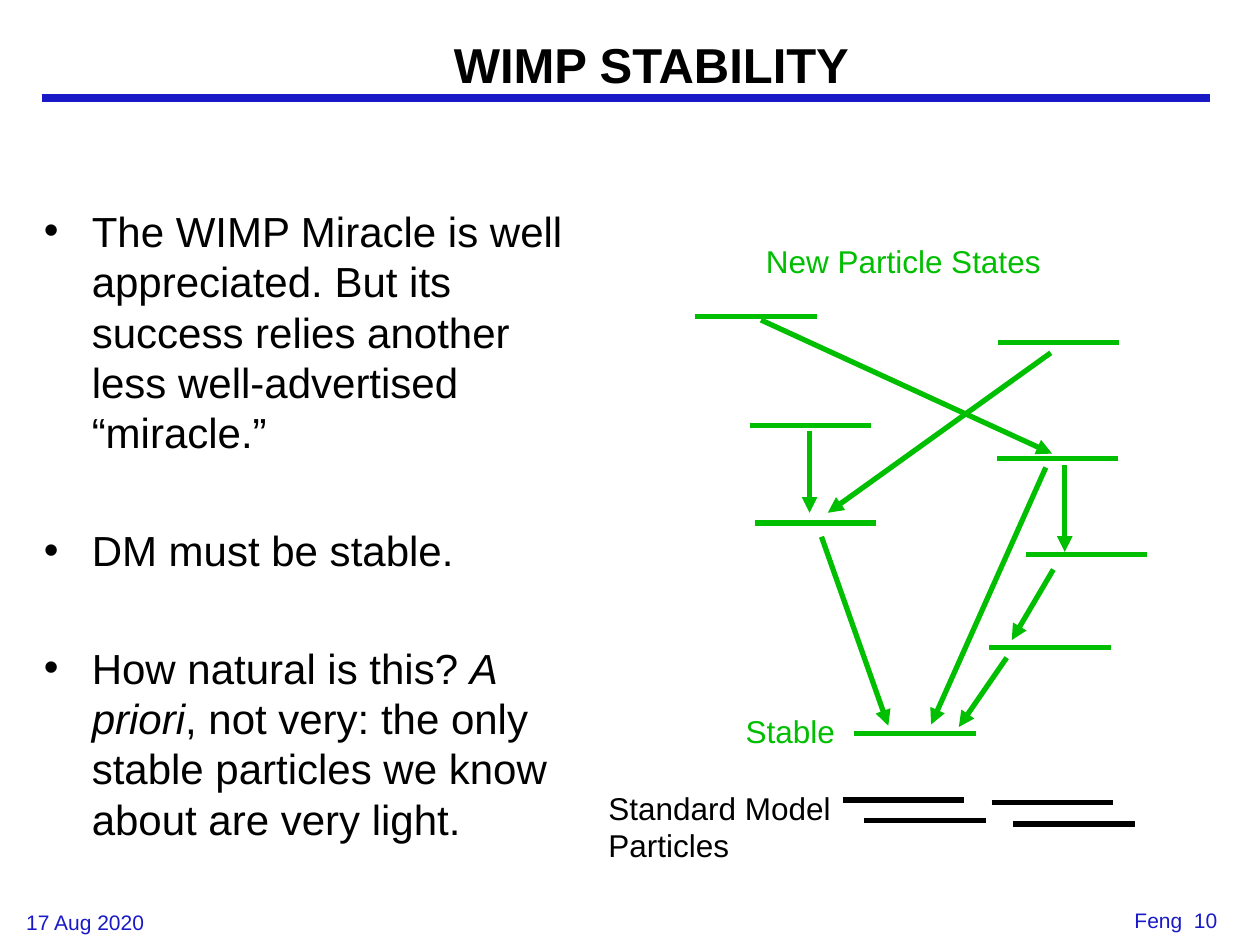
from dataclasses import dataclass
from lxml import etree
from pptx import Presentation
from pptx import util as u
from pptx.dml.color import RGBColor
from pptx.enum import shapes, text
from pptx.oxml.ns import qn


@dataclass(frozen=True)
class Theme:
    font: str = "Arial"
    ink: str = "000000"
    blue: str = "1919C8"
    green: str = "00BE00"
    title: int = 28
    body: int = 24
    label: int = 18
    foot: int = 12
    rule: float = 4.5
    line: float = 3
    gap: float = 38.4


THEME = Theme()
COLS, ROWS = 100, 75
WIDE, HIGH = u.Inches(10), u.Inches(7.5)
LEVEL = 9.65  # columns spanned by one energy level

# Left end of each level: column, row
STATES = [(55.2, 25.1), (79.2, 27.2), (59.5, 33.8), (79.1, 36.4),
          (59.9, 41.5), (81.4, 44), (78.5, 51.4), (67.8, 58.2)]
KNOWN = [(66.9, 63.5), (68.6, 65.1), (78.7, 63.7), (80.4, 65.4)]
# Start column and row, then end column and row
DECAYS = [(60.4, 25.4, 83.5, 36), (83.4, 28, 65.7, 40.7),
          (64.25, 34.2, 64.25, 40.7), (84.5, 36.9, 84.5, 43.8),
          (83, 37.1, 73.9, 57.5), (65.2, 42.6, 70.5, 57.6),
          (83.6, 45.2, 80.3, 50.8), (79.9, 52.2, 76.1, 57.7)]
POINTS = [
    [("The WIMP Miracle is well appreciated. But its success relies another "
      "less well-advertised “miracle.”", False)],
    [("DM must be stable.", False)],
    [("How natural is this? ", False), ("A priori", True),
     (", not very: the only stable particles we know about are very light.",
      False)],
]


def col(n):
    return round(WIDE * n / COLS)


def row(n):
    return round(HIGH * n / ROWS)


def style(run, size, tone, bold=False, slant=False):
    font = run.font
    font.name, font.size = THEME.font, u.Pt(size)
    font.bold, font.italic = bold, slant
    font.color.rgb = RGBColor.from_string(tone)


def frame(slide, x, y, w, h, wrap=True):
    box = slide.shapes.add_textbox(col(x), row(y), col(w), row(h))
    box.text_frame.word_wrap = wrap
    return box.text_frame


def label(slide, words, area, size, tone, align="LEFT", wrap=False, bold=False):
    tf = frame(slide, *area, wrap=wrap)
    tf.text = words
    for para in tf.paragraphs:
        para.alignment = getattr(text.PP_ALIGN, align)
        for run in para.runs:
            style(run, size, tone, bold)
    return tf


def bullets(slide, area, points):
    tf = frame(slide, *area)
    for i, parts in enumerate(points):
        para = tf.add_paragraph() if i else tf.paragraphs[0]
        props = para._p.get_or_add_pPr()
        props.set("marL", str(u.Inches(0.38)))
        props.set("indent", str(-u.Inches(0.38)))
        etree.SubElement(props, qn("a:buFont"), typeface=THEME.font)
        etree.SubElement(props, qn("a:buChar"), char="•")
        if i:
            para.space_before = u.Pt(THEME.gap)
        for words, slant in parts:
            run = para.add_run()
            run.text = words
            style(run, THEME.body, THEME.ink, slant=slant)


def line(slide, x1, y1, x2, y2, tone, width=THEME.line, arrow=False):
    link = slide.shapes.add_connector(
        shapes.MSO_CONNECTOR.STRAIGHT, col(x1), row(y1), col(x2), row(y2))
    link.line.color.rgb = RGBColor.from_string(tone)
    link.line.width = u.Pt(width)
    if arrow:
        etree.SubElement(link.line._get_or_add_ln(), qn("a:tailEnd"),
                         type="triangle")
    etree.SubElement(link._element.spPr, qn("a:effectLst"))


def levels(slide, spots, tone):
    for x, y in spots:
        line(slide, x, y, x + LEVEL, y, tone)


def main():
    deck = Presentation()
    deck.slide_width, deck.slide_height = WIDE, HIGH
    slide = deck.slides.add_slide(deck.slide_layouts[6])
    t = THEME

    line(slide, 3.3, 7.8, 96, 7.8, t.blue, t.rule)
    label(slide, "17 Aug 2020", (1.1, 71.7, 20.8, 3.1), t.foot, t.blue,
          wrap=True)
    label(slide, "Feng  10", (76.8, 71.5, 20.8, 3.5), t.foot, t.blue,
          "RIGHT", wrap=True)
    head = label(slide, "WIMP STABILITY", (14.2, 2.7, 75, 4.8), t.title,
                 t.ink, "CENTER", wrap=True, bold=True)
    head.vertical_anchor = text.MSO_ANCHOR.MIDDLE
    bullets(slide, (2.5, 15.8, 44.8, 53.3), POINTS)

    levels(slide, STATES, t.green)
    levels(slide, KNOWN, t.ink)
    for ends in DECAYS:
        line(slide, *ends, t.green, arrow=True)
    label(slide, "New Particle States", (59.8, 18.7, 23.8, 4), t.label, t.green)
    label(slide, "Stable", (58.2, 56, 9.1, 4), t.label, t.green)
    label(slide, "Standard Model\nParticles", (47.3, 62.1, 19.7, 7), t.label,
          t.ink)
    deck.save("out.pptx")


if __name__ == "__main__":
    main()
